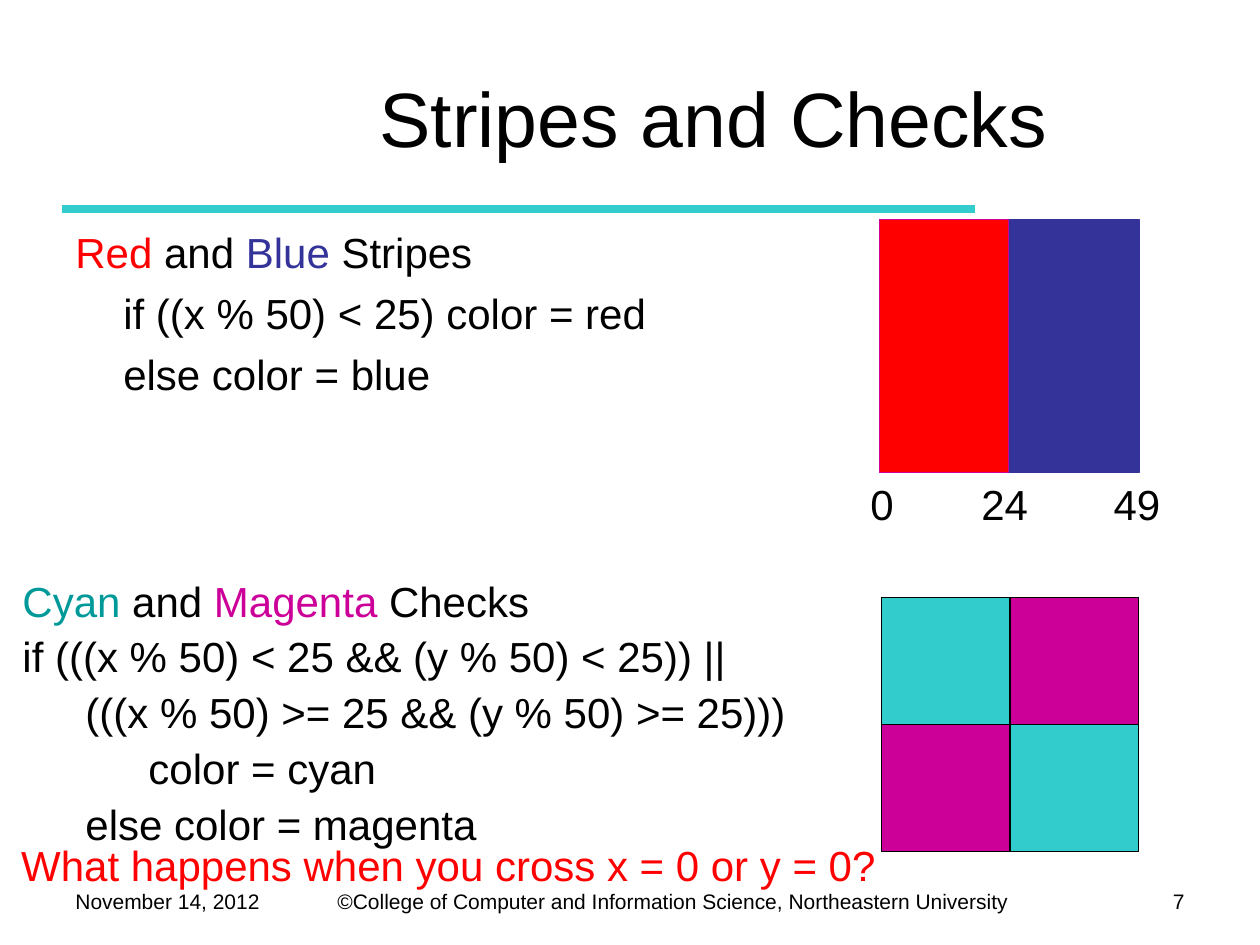
from lxml import etree
from pptx import Presentation, util as u
from pptx.dml.color import RGBColor
from pptx.enum import shapes, text
from pptx.oxml.ns import qn

COLORS = {"black": "000000", "red": "FF0000", "blue": "333399", "teal": "009999",
          "cyan": "33CCCC", "magenta": "CC0099"}

deck = Presentation()
deck.slide_width, deck.slide_height = u.Inches(10), u.Inches(7.5)
slide = deck.slides.add_slide(deck.slide_layouts[5])

# The slide is a grid of 100 columns by 75 rows
COL, ROW = deck.slide_width / 100, deck.slide_height / 75


def place(left, top, width, height):
    return [int(n) for n in (left * COL, top * ROW, width * COL, height * ROW)]


def write(frame, lines, size, align=text.PP_ALIGN.LEFT, before=0, spacing=None):
    """Each line is (indent in columns, [(words, color name), ...])."""
    frame.word_wrap = True
    for i, (indent, pieces) in enumerate(lines):
        line = frame.paragraphs[0] if i == 0 else frame.add_paragraph()
        line.alignment = align
        if indent:
            line._p.get_or_add_pPr().set("marL", str(int(indent * COL)))
        if spacing:
            line.line_spacing = spacing
        if i:
            line.space_before = u.Pt(before)
        for words, color in pieces:
            run = line.add_run()
            run.text = words
            run.font.name, run.font.size = "Arial", u.Pt(size)
            run.font.color.rgb = RGBColor.from_string(COLORS[color])


# Title and the rule under it
title = slide.shapes.title
title.left, title.top, title.width, title.height = place(18.3, 3, 76.7, 12.5)
title.text_frame.vertical_anchor = text.MSO_ANCHOR.MIDDLE
write(title.text_frame, [(0, [("Stripes and Checks", "black")])], 44,
      text.PP_ALIGN.CENTER)

left, top, right, bottom = place(4.9, 16.6, 77.4, 16.6)
rule = slide.shapes.add_connector(shapes.MSO_CONNECTOR.STRAIGHT, left, top, right, bottom)
rule.line.color.rgb = RGBColor.from_string(COLORS["cyan"])
rule.line.width = u.Pt(4.5)
etree.SubElement(rule._element.spPr, qn("a:effectLst"))

# Rules for stripes and for checks
stripes_rule = [
    (0, [("Red", "red"), (" and ", "black"), ("Blue", "blue"), (" Stripes", "black")]),
    (3.8, [("if ((x % 50) < 25) color = red", "black")]),
    (3.8, [("else color = blue", "black")]),
]
checks_rule = [
    (0, [("Cyan", "teal"), (" and ", "black"), ("Magenta", "magenta"), (" Checks", "black")]),
    (0, [("if (((x % 50) < 25 && (y % 50) < 25)) ||", "black")]),
    (5, [("(((x % 50) >= 25 && (y % 50) >= 25)))", "black")]),
    (10, [("color = cyan", "black")]),
    (5, [("else color = magenta", "black")]),
]
for lines, area, spacing in [(stripes_rule, (5, 17.5, 62.9, 17.2), None),
                             (checks_rule, (0.8, 45.6, 69.1, 22.2), 0.9)]:
    box = slide.shapes.add_textbox(*place(*area))
    write(box.text_frame, lines, 24, before=6, spacing=spacing)

# Stripe and check samples: left, top, width, height, fill, outline
samples = [(69.8 + 10.3 * i, 17.4, 10.3, 20.1, fill, outline)
           for i, (fill, outline) in enumerate([("red", "magenta"), ("blue", "blue")])]
samples += [(69.95 + 10.2 * i, 47.4 + 10.1 * j, 10.2, 10.1,
             "magenta" if (i + j) % 2 else "cyan", "black")
            for j in range(2) for i in range(2)]
for *area, fill, outline in samples:
    tile = slide.shapes.add_shape(shapes.MSO_SHAPE.RECTANGLE, *place(*area))
    tile.shadow.inherit = False
    tile.fill.solid()
    tile.fill.fore_color.rgb = RGBColor.from_string(COLORS[fill])
    tile.line.color.rgb = RGBColor.from_string(COLORS[outline])
    tile.line.width = u.Pt(0.75)

# Stripe positions, question and footer
LEFT, RIGHT = text.PP_ALIGN.LEFT, text.PP_ALIGN.RIGHT
for words, area, size, color, align in [
    ("0", (68.1, 37.5, 5, 5), 24, "black", LEFT),
    ("24", (76.9, 37.5, 6.9, 5), 24, "black", LEFT),
    ("49", (87.4, 37.5, 6.9, 5), 24, "black", LEFT),
    ("What happens when you cross x = 0 or y = 0?", (0.7, 66.1, 72.5, 5), 24, "red", LEFT),
    ("November 14, 2012", (5, 70, 17.5, 3.3), 12, "black", LEFT),
    ("©College of Computer and Information Science, Northeastern University",
     (25.8, 70, 56.6, 3), 12, "black", LEFT),
    ("7", (86.7, 70, 8.3, 3.5), 12, "black", RIGHT),
]:
    label = slide.shapes.add_textbox(*place(*area))
    write(label.text_frame, [(0, [(words, color)])], size, align)

deck.save("out.pptx")
